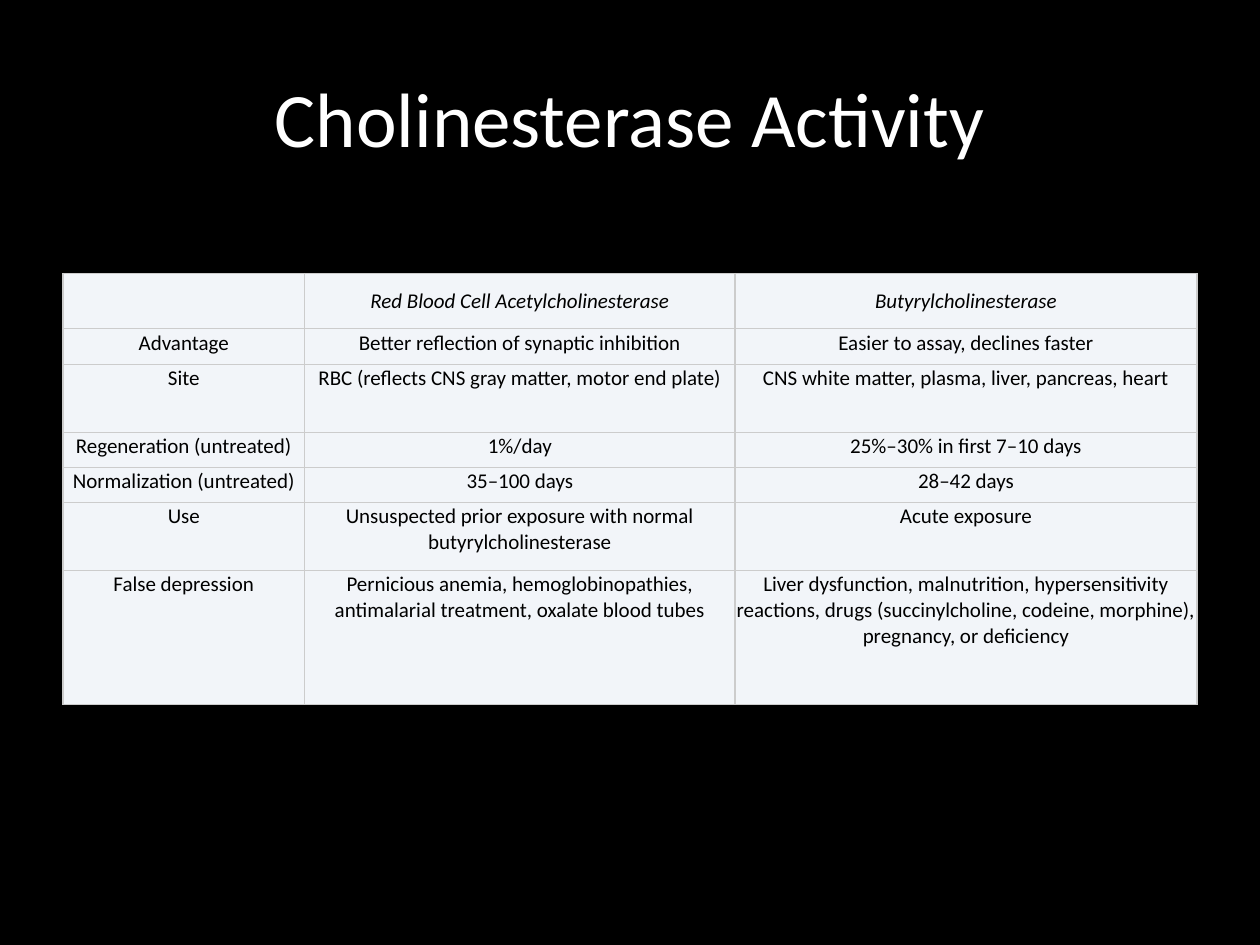
from lxml import etree
from pptx import Presentation
from pptx.dml.color import RGBColor
from pptx.enum.text import MSO_ANCHOR, PP_ALIGN
from pptx.oxml.ns import qn
from pptx.util import Inches, Pt

CENTER = PP_ALIGN.CENTER
MIDDLE, TOP = MSO_ANCHOR.MIDDLE, MSO_ANCHOR.TOP
TITLE_ONLY = 5
BLACK, WHITE, CELL_FILL, GRID = "000000", "FFFFFF", "F2F5F9", "CCCCCC"

COLUMN_WIDTHS = [1.92, 3.42, 3.67]
ROW_HEIGHTS = [0.44, 0.28, 0.54, 0.28, 0.28, 0.54, 1.06]
ROWS = [
    ("", "Red Blood Cell Acetylcholinesterase", "Butyrylcholinesterase"),
    ("Advantage", "Better reflection of synaptic inhibition",
     "Easier to assay, declines faster"),
    ("Site", "RBC (reflects CNS gray matter, motor end plate)",
     "CNS white matter, plasma, liver, pancreas, heart"),
    ("Regeneration (untreated)", "1%/day", "25%–30% in first 7–10 days"),
    ("Normalization (untreated)", "35–100 days", "28–42 days"),
    ("Use", "Unsuspected prior exposure with normal butyrylcholinesterase",
     "Acute exposure"),
    ("False depression",
     "Pernicious anemia, hemoglobinopathies, antimalarial treatment, oxalate blood tubes",
     "Liver dysfunction, malnutrition, hypersensitivity reactions, drugs "
     "(succinylcholine, codeine, morphine), pregnancy, or deficiency"),
]


def paint(fill, color):
    """Make a fill solid in the given hex colour."""
    fill.solid()
    fill.fore_color.rgb = RGBColor.from_string(color)


def write(frame, text, size=12, color=BLACK, italic=False):
    """Put one centred, formatted paragraph in a text frame."""
    para = frame.paragraphs[0]
    para.alignment = CENTER
    span = para.add_run()
    span.text = text
    span.font.name = "Calibri"
    span.font.size = Pt(size)
    span.font.italic = italic
    span.font.color.rgb = RGBColor.from_string(color)


def outline(cell, color, width):
    """Draw all four borders of a table cell."""
    properties = cell._tc.get_or_add_tcPr()
    for side in ("a:lnL", "a:lnR", "a:lnT", "a:lnB"):
        line = etree.SubElement(properties, qn(side), w=str(Pt(width)))
        solid = etree.SubElement(line, qn("a:solidFill"))
        etree.SubElement(solid, qn("a:srgbClr"), val=color)


def place_title(page, left, top, width, height):
    """Place the slide title in its box."""
    box = page.shapes.title
    box.left, box.top = Inches(left), Inches(top)
    box.width, box.height = Inches(width), Inches(height)
    box.text_frame.vertical_anchor = MIDDLE
    write(box.text_frame, "Cholinesterase Activity", size=44, color=WHITE)


def fill_cell(cell, text, header):
    """Format one table cell and write its text."""
    outline(cell, GRID, 0.75)
    paint(cell.fill, CELL_FILL)
    if not text:
        return
    margin = Inches(0.07 if header else 0.01)
    cell.margin_left = cell.margin_right = margin
    cell.margin_top = cell.margin_bottom = margin
    cell.vertical_anchor = MIDDLE if header else TOP
    write(cell.text_frame, text, italic=header)


def place_table(page, left, top, width, height):
    """Place the enzyme comparison table in its box."""
    table = page.shapes.add_table(
        len(ROWS), len(COLUMN_WIDTHS),
        Inches(left), Inches(top), Inches(width), Inches(height)).table
    table.first_row = table.horz_banding = False
    for column, share in zip(table.columns, COLUMN_WIDTHS):
        column.width = Inches(width * share / sum(COLUMN_WIDTHS))
    for row, share in zip(table.rows, ROW_HEIGHTS):
        row.height = Inches(height * share / sum(ROW_HEIGHTS))
    for index, texts in enumerate(ROWS):
        for cell, text in zip(table.rows[index].cells, texts):
            fill_cell(cell, text, header=index == 0)


def main():
    """Build and save the deck."""
    deck = Presentation()
    deck.slide_width, deck.slide_height = Inches(10), Inches(7.5)
    page = deck.slides.add_slide(deck.slide_layouts[TITLE_ONLY])
    paint(page.background.fill, BLACK)
    place_title(page, 0.5, 0.3, 9, 1.25)
    place_table(page, 0.5, 2.17, 9, 3.42)
    deck.save("out.pptx")


if __name__ == "__main__":
    main()
